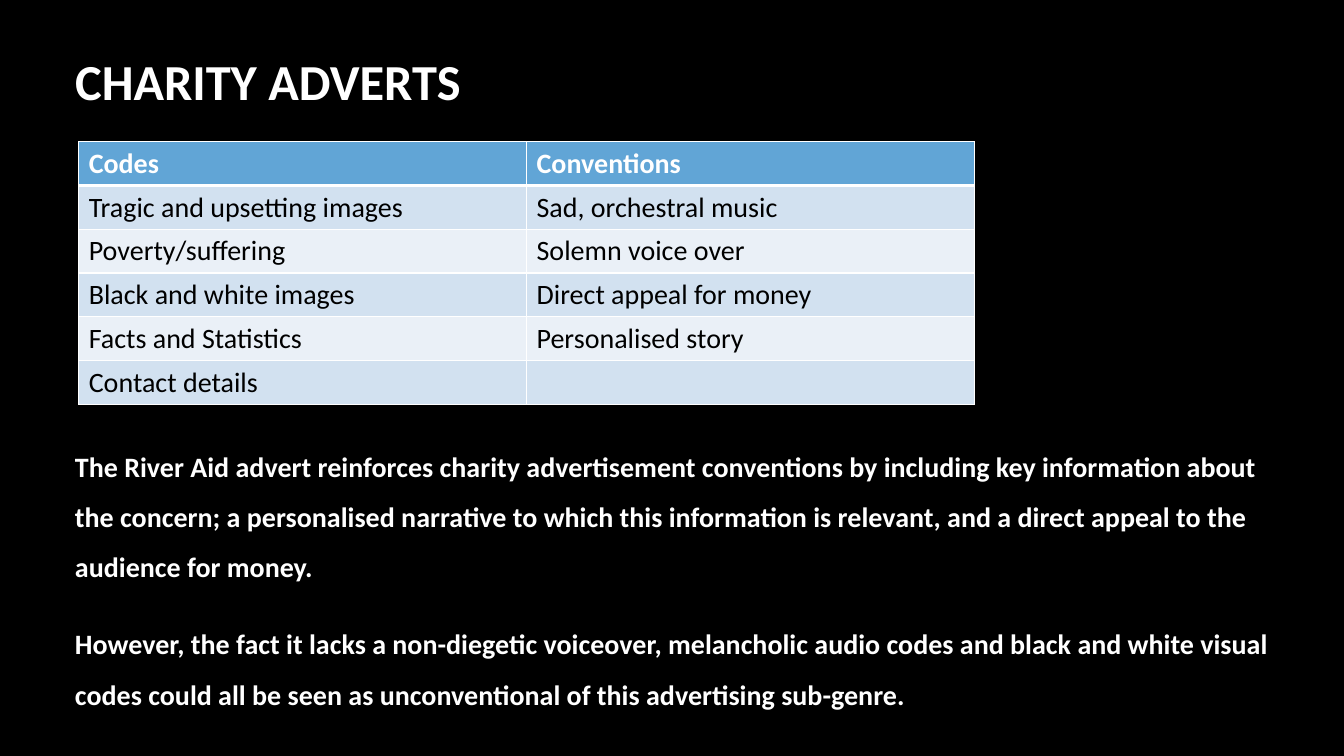
import lxml.etree
import pptx
import pptx.dml.color
import pptx.enum.text
import pptx.oxml.ns
import pptx.util

PX = 9525
WHITE = pptx.dml.color.RGBColor(0xFF, 0xFF, 0xFF)
BLACK = pptx.dml.color.RGBColor(0x00, 0x00, 0x00)
HEADER_BLUE = pptx.dml.color.RGBColor(0x61, 0xA5, 0xD6)
BAND_DARK = pptx.dml.color.RGBColor(0xD2, 0xE1, 0xF0)
BAND_LIGHT = pptx.dml.color.RGBColor(0xEA, 0xF0, 0xF7)

TITLE_FORMAT = {"name": "Calibri", "size": pptx.util.Pt(36), "bold": True}
STRONG_FORMAT = {"name": "Calibri", "size": pptx.util.Pt(20), "bold": True}
CELL_FORMAT = {"name": "Calibri", "size": pptx.util.Pt(20), "bold": False}

ADVERT_FEATURES = [
    ("Codes", "Conventions"),
    ("Tragic and upsetting images", "Sad, orchestral music"),
    ("Poverty/suffering", "Solemn voice over"),
    ("Black and white images", "Direct appeal for money"),
    ("Facts and Statistics", "Personalised story"),
    ("Contact details", ""),
]
ANALYSIS = [
    "The River Aid advert reinforces charity advertisement conventions by "
    "including key information about the concern; a personalised narrative to "
    "which this information is relevant, and a direct appeal to the audience "
    "for money.",
    "However, the fact it lacks a non-diegetic voiceover, melancholic audio "
    "codes and black and white visual codes could all be seen as "
    "unconventional of this advertising sub-genre.",
]


def scaled(box):
    return [length * PX for length in box]


def write(para, text, formats, color):
    span = para.add_run()
    span.text = text
    for name, value in formats.items():
        setattr(span.font, name, value)
    span.font.color.rgb = color


def set_borders(cell, widths):
    properties = cell._tc.get_or_add_tcPr()
    for side, points in widths.items():
        line = lxml.etree.SubElement(
            properties, pptx.oxml.ns.qn("a:ln" + side), w=str(pptx.util.Pt(points)))
        fill = lxml.etree.SubElement(line, pptx.oxml.ns.qn("a:solidFill"))
        lxml.etree.SubElement(fill, pptx.oxml.ns.qn("a:srgbClr"), val=str(WHITE))


def place_title(page, box, text):
    title = page.shapes.title
    title.left, title.top, title.width, title.height = scaled(box)
    frame = title.text_frame
    frame.vertical_anchor = pptx.enum.text.MSO_ANCHOR.MIDDLE
    para = frame.paragraphs[0]
    para.alignment = pptx.enum.text.PP_ALIGN.LEFT
    write(para, text, TITLE_FORMAT, WHITE)


def place_features(page, box, rows):
    table = page.shapes.add_table(len(rows), len(rows[0]), *scaled(box)).table
    for row_index, row in enumerate(rows):
        header = row_index == 0
        band = BAND_DARK if row_index % 2 else BAND_LIGHT
        widths = {"L": 1, "R": 1, "T": 3 if row_index == 1 else 1, "B": 3 if header else 1}
        for column_index, text in enumerate(row):
            cell = table.cell(row_index, column_index)
            set_borders(cell, widths)
            cell.fill.solid()
            cell.fill.fore_color.rgb = HEADER_BLUE if header else band
            if text:
                write(cell.text_frame.paragraphs[0], text,
                      STRONG_FORMAT if header else CELL_FORMAT,
                      WHITE if header else BLACK)


def place_analysis(page, box, paragraphs):
    frame = page.shapes.add_textbox(*scaled(box)).text_frame
    frame.word_wrap = True
    frame.auto_size = pptx.enum.text.MSO_AUTO_SIZE.SHAPE_TO_FIT_TEXT
    for index, text in enumerate(paragraphs):
        para = frame.add_paragraph() if index else frame.paragraphs[0]
        para.line_spacing = 1.5
        if index:
            para.space_before = pptx.util.Pt(19)
        write(para, text, STRONG_FORMAT, WHITE)


def main():
    deck = pptx.Presentation()
    deck.slide_width, deck.slide_height = scaled((1280, 720))
    page = deck.slides.add_slide(deck.slide_layouts[5])
    page.background.fill.solid()
    page.background.fill.fore_color.rgb = BLACK
    place_title(page, (62, 0, 1064, 153), "CHARITY ADVERTS")
    place_analysis(page, (62, 407, 1182, 286), ANALYSIS)
    place_features(page, (75, 135, 853, 250), ADVERT_FEATURES)
    deck.save("out.pptx")


if __name__ == "__main__":
    main()
